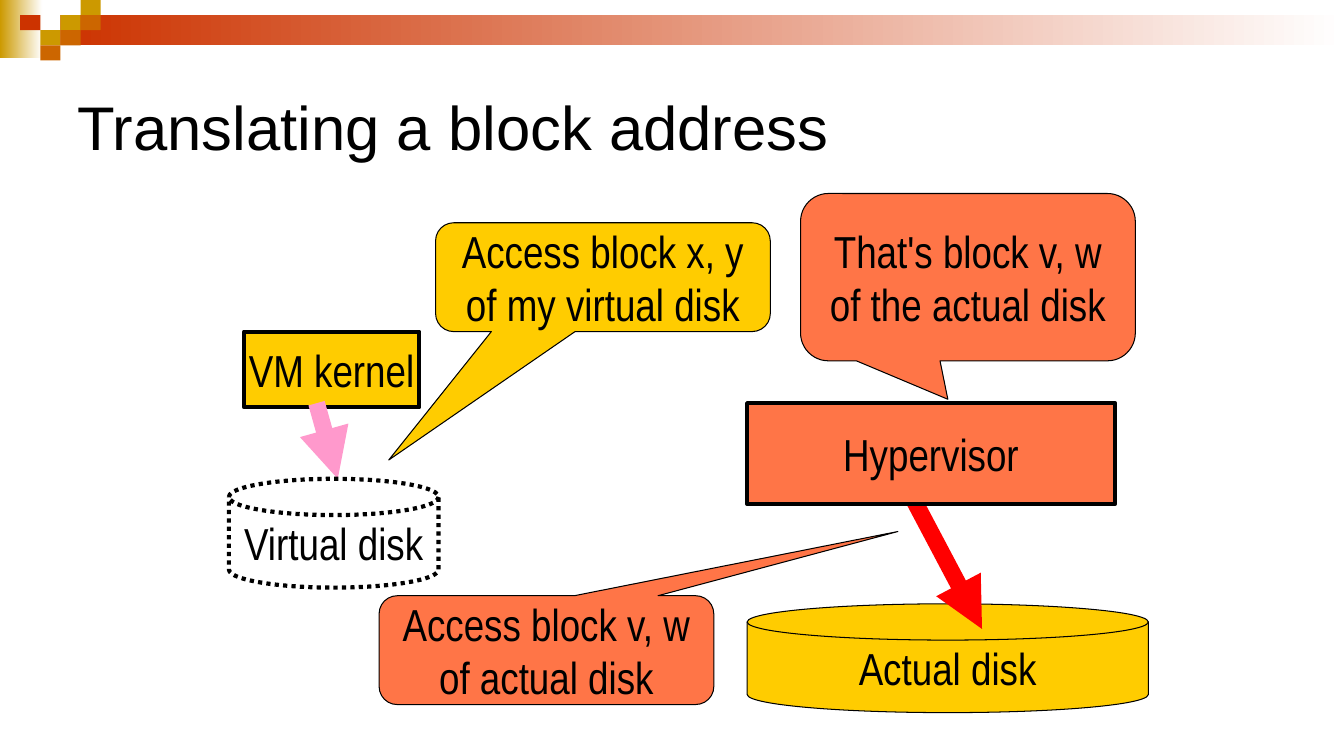
from dataclasses import dataclass

from pptx import Presentation
from pptx.dml.color import RGBColor
from pptx.enum.dml import MSO_LINE
from pptx.enum.shapes import MSO_CONNECTOR, MSO_SHAPE
from pptx.enum.text import MSO_ANCHOR, PP_ALIGN
from pptx.oxml.ns import qn
from pptx.util import Inches, Pt
from lxml.etree import SubElement


@dataclass(frozen=True)
class Theme:
    black: str = "000000"
    white: str = "FFFFFF"
    gold: str = "CC9900"
    brick: str = "CC3300"
    orange: str = "CC6600"
    yellow: str = "FFCC00"
    coral: str = "FF7547"
    pink: str = "FF99CC"
    red: str = "FF0000"
    title_font: str = "Arial"
    label_font: str = "Arial Narrow"
    title_size: int = 44
    label_size: int = 32
    thin: float = 0.75
    thick: float = 3
    arrow: float = 12


class SlideBuilder:
    def __init__(self, slide, theme):
        self.shapes = slide.shapes
        self.theme = theme

    def add_lines(self, frame, lines, font, size, align):
        frame.vertical_anchor = MSO_ANCHOR.MIDDLE
        for index, line in enumerate(lines):
            paragraph = frame.add_paragraph() if index else frame.paragraphs[0]
            paragraph.alignment = align
            run = paragraph.add_run()
            run.text = line
            run.font.name = font
            run.font.size = Pt(size)
            run.font.color.rgb = RGBColor.from_string(self.theme.black)

    def title(self, text, box):
        frame = self.shapes.add_textbox(*map(Inches, box)).text_frame
        frame.word_wrap = True
        self.add_lines(frame, [text], self.theme.title_font,
                       self.theme.title_size, PP_ALIGN.LEFT)

    def block(self, kind, box, fill=None):
        block = self.shapes.add_shape(kind, *map(Inches, box))
        block.shadow.inherit = False
        block.line.fill.background()
        if fill:
            block.fill.solid()
            block.fill.fore_color.rgb = RGBColor.from_string(fill)
        else:
            block.fill.background()
        return block

    def fading_bar(self, box, color):
        """Draw a bar that fades to white from left to right."""
        fill = self.block(MSO_SHAPE.RECTANGLE, box).fill
        fill.gradient()
        fill.gradient_angle = 0
        for stop, shade in zip(fill.gradient_stops, (color, self.theme.white)):
            stop.color.rgb = RGBColor.from_string(shade)

    def node(self, kind, box, lines, fill, width, wrap=False):
        node = self.block(kind, box, fill)
        node.line.color.rgb = RGBColor.from_string(self.theme.black)
        node.line.width = Pt(width)
        node.text_frame.word_wrap = wrap
        self.add_lines(node.text_frame, lines, self.theme.label_font,
                       self.theme.label_size, PP_ALIGN.CENTER)
        return node

    def callout(self, box, lines, fill, tip):
        """Draw a speech bubble; tip is its offset from the centre in box sizes."""
        bubble = self.node(MSO_SHAPE.ROUNDED_RECTANGULAR_CALLOUT, box, lines,
                           fill, self.theme.thin, wrap=True)
        bubble.adjustments[0], bubble.adjustments[1] = tip

    def arrow(self, start, end, color):
        arrow = self.shapes.add_connector(
            MSO_CONNECTOR.STRAIGHT, *map(Inches, (*start, *end)))
        arrow.line.color.rgb = RGBColor.from_string(color)
        arrow.line.width = Pt(self.theme.arrow)
        properties = arrow.element.spPr
        SubElement(properties.find(qn("a:ln")), qn("a:tailEnd"), type="triangle")
        SubElement(properties, qn("a:effectLst"))


def draw_header(builder, theme):
    builder.fading_bar((0, 0, 0.42, 0.58), theme.gold)
    builder.fading_bar((0.6, 0.15, 12.73, 0.3), theme.brick)
    tile_width, tile_height = 0.2, 0.15
    tiles = [(3, 1, theme.gold), (4, 0, theme.gold), (4, 1, theme.orange),
             (2, 2, theme.gold), (1, 1, theme.brick), (3, 2, theme.orange),
             (2, 3, theme.orange)]
    for column, row, color in tiles:
        builder.block(MSO_SHAPE.RECTANGLE,
                      (column * tile_width, row * tile_height,
                       tile_width, tile_height), color)


def draw_translation(builder, theme):
    disk = MSO_SHAPE.FLOWCHART_MAGNETIC_DISK
    builder.node(MSO_SHAPE.RECTANGLE, (2.42, 3.29, 1.74, 0.75),
                 ["VM kernel"], theme.yellow, theme.thick)
    builder.arrow((3.14, 4), (3.35, 4.75), theme.pink)
    virtual_disk = builder.node(disk, (2.27, 4.75, 2.08, 1.08),
                                ["Virtual disk"], None, theme.thick)
    virtual_disk.line.dash_style = MSO_LINE.ROUND_DOT
    builder.callout((4.32, 2.21, 3.32, 1.08),
                    ["Access block x, y", "of my virtual disk"],
                    theme.yellow, (-0.64, 1.68))
    builder.callout((7.94, 1.92, 3.32, 1.66),
                    ["That's block v, w of the actual disk"],
                    theme.coral, (-0.06, 0.73))
    builder.node(disk, (7.41, 5.99, 3.98, 1.08),
                 ["Actual disk"], theme.yellow, theme.thin)
    builder.arrow((8.82, 4.5), (9.74, 6.24), theme.red)
    builder.node(MSO_SHAPE.RECTANGLE, (7.41, 4, 3.65, 1),
                 ["Hypervisor"], theme.coral, theme.thick)
    builder.callout((3.76, 5.91, 3.32, 1.08),
                    ["Access block v, w", "of actual disk"],
                    theme.coral, (1.05, -1.09))


def main():
    deck = Presentation()
    deck.slide_width, deck.slide_height = Inches(13.33), Inches(7.5)
    theme = Theme()
    builder = SlideBuilder(deck.slides.add_slide(deck.slide_layouts[6]), theme)
    draw_header(builder, theme)
    builder.title("Translating a block address", (0.67, 0.5, 12, 1.5))
    draw_translation(builder, theme)
    deck.save("out.pptx")


if __name__ == "__main__":
    main()
